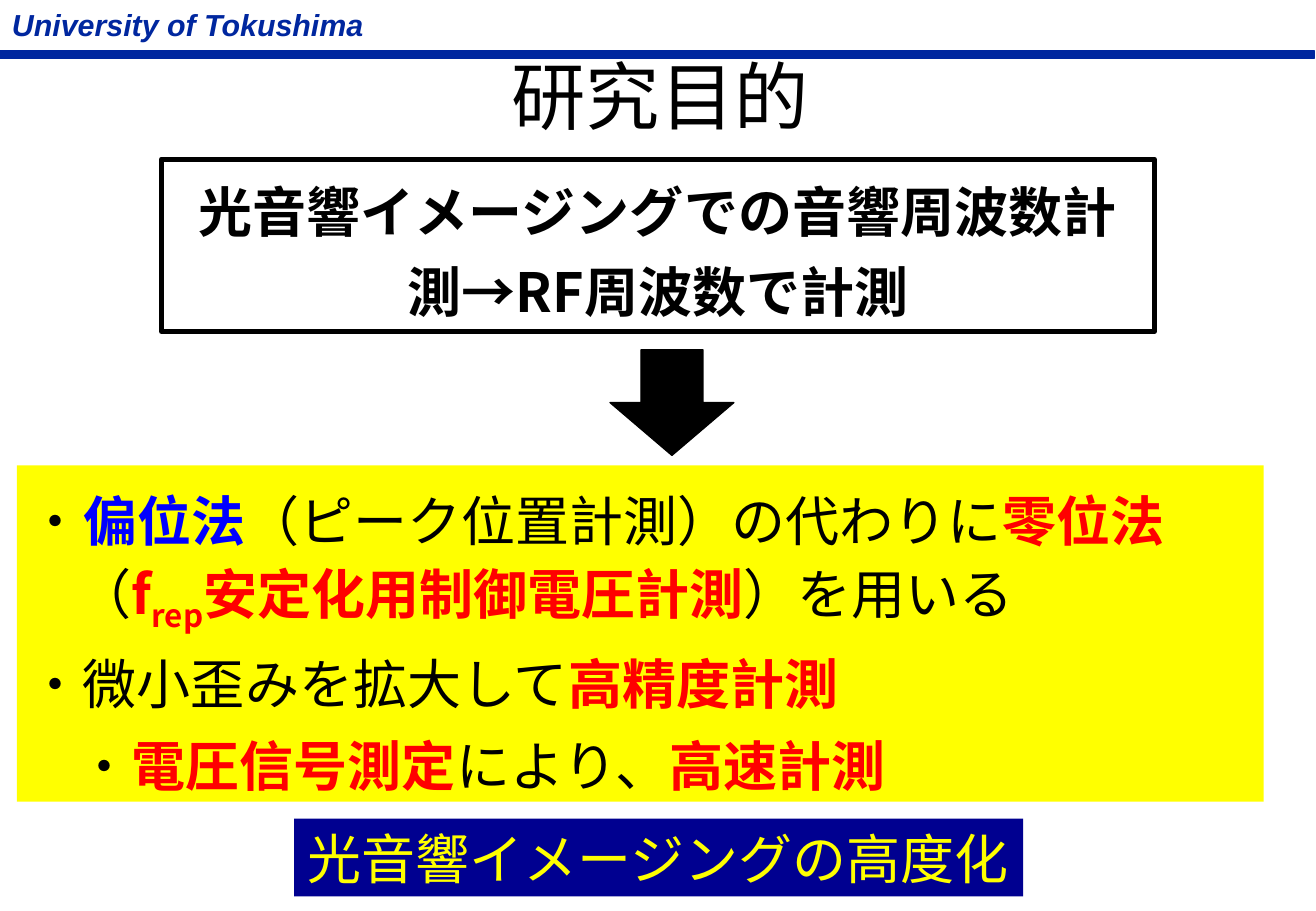
from lxml import etree
from pptx import Presentation
from pptx.dml.color import RGBColor
from pptx.enum.shapes import MSO_SHAPE
from pptx.enum.text import MSO_ANCHOR, PP_ALIGN
from pptx.oxml.ns import qn
from pptx.util import Inches, Pt

RECTANGLE, DOWN_ARROW = MSO_SHAPE.RECTANGLE, MSO_SHAPE.DOWN_ARROW
TOP, MIDDLE = MSO_ANCHOR.TOP, MSO_ANCHOR.MIDDLE
LEFT, CENTER = PP_ALIGN.LEFT, PP_ALIGN.CENTER
JAPANESE, LATIN = "Noto Sans CJK JP", "Arial"
COLORS = {"rule": "00279F", "black": "000000", "yellow": "FFFF00",
          "blue": "0000FF", "red": "FF0000", "navy": "000090"}

HEADER = [[("University of Tokushima", "rule", True)]]
TITLE = [[("研究目的", "black", False)]]
PURPOSE = [[("光音響イメージングでの音響周波数計測→RF周波数で計測", "black", True)]]
METHODS = [
    [("・", "black", False), ("偏位法", "blue", True),
     ("（ピーク位置計測）の代わりに", "black", False), ("零位法", "red", True),
     ("（", "black", False), ("f", "red", True), ("rep", "red", True),
     ("安定化用制御電圧計測", "red", True), ("）を用いる", "black", False)],
    [("・微小歪みを拡大して", "black", False), ("高精度計測", "red", True)],
    [("・", "black", False), ("電圧信号測定", "red", True),
     ("により、", "black", False), ("高速計測", "red", True)],
]
GOAL = [[("光音響イメージングの高度化", "yellow", False)]]
SUBSCRIPTS = {"rep"}
METHOD_INDENTS = [(0.4, -0.4), (0.4, -0.4), (0.4, 0)]

PLACES = {
    "rule": (0, 5.6, 99.9, 0.8),
    "header": (0, 0, 29.36, 5.33),
    "title": (0.18, 4.8, 100, 11.2),
    "methods": (1.29, 51.07, 94.74, 36.93),
    "purpose": (12.28, 17.47, 75.44, 18.93),
    "arrow": (46.35, 38.4, 9.42, 11.6),
    "goal": (22.35, 89.87, 55.4, 8.53),
}

presentation = Presentation()
presentation.slide_width, presentation.slide_height = Inches(10.83), Inches(7.5)
slide = presentation.slides.add_slide(presentation.slide_layouts[6])


def place(name):
    sides = (presentation.slide_width, presentation.slide_height) * 2
    return [int(side * share / 100) for side, share in zip(sides, PLACES[name])]


def add_block(name, kind=RECTANGLE, fill=None, line=None, width=1):
    shape = slide.shapes.add_shape(kind, *place(name))
    shape.shadow.inherit = False
    if fill:
        shape.fill.solid()
        shape.fill.fore_color.rgb = RGBColor.from_string(COLORS[fill])
    else:
        shape.fill.background()
    if line:
        shape.line.color.rgb = RGBColor.from_string(COLORS[line])
        shape.line.width = Pt(width)
    else:
        shape.line.fill.background()
    return shape


def write(shape, paragraphs, size=32, font=JAPANESE, align=LEFT, anchor=MIDDLE,
          wrap=True, spacing=None, top=0.05, italic=False):
    frame = shape.text_frame
    frame.word_wrap = wrap
    frame.vertical_anchor = anchor
    frame.margin_top = Inches(top)
    for index, runs in enumerate(paragraphs):
        paragraph = frame.paragraphs[0] if index == 0 else frame.add_paragraph()
        paragraph.alignment = align
        if spacing:
            paragraph.line_spacing = Pt(spacing)
        for text, color, bold in runs:
            run = paragraph.add_run()
            run.text = text
            run.font.size, run.font.name = Pt(size), font
            run.font.bold, run.font.italic = bold, italic
            run.font.color.rgb = RGBColor.from_string(COLORS[color])
            properties = run.font._element
            etree.SubElement(properties, qn("a:ea")).set("typeface", font)
            if text in SUBSCRIPTS:
                properties.set("baseline", "-25000")
    return frame


def add_text(name, paragraphs, **style):
    return write(slide.shapes.add_textbox(*place(name)), paragraphs, **style)


add_block("rule", fill="rule", line="rule")
add_text("header", HEADER, size=18, font=LATIN, anchor=TOP, wrap=False, italic=True)
add_text("title", TITLE, size=44, align=CENTER)

methods = write(add_block("methods", fill="yellow"), METHODS,
                anchor=TOP, spacing=48.5, top=0.04)
for paragraph, (margin, indent) in zip(methods.paragraphs, METHOD_INDENTS):
    properties = paragraph._p.get_or_add_pPr()
    properties.set("marL", str(Inches(margin)))
    properties.set("indent", str(Inches(indent)))

write(add_block("purpose", line="black", width=3), PURPOSE,
      align=CENTER, anchor=TOP, spacing=47.5, top=0.03)
add_block("arrow", DOWN_ARROW, fill="black", line="black", width=0.75)
write(add_block("goal", fill="navy"), GOAL, align=CENTER, wrap=False)

presentation.save("out.pptx")
